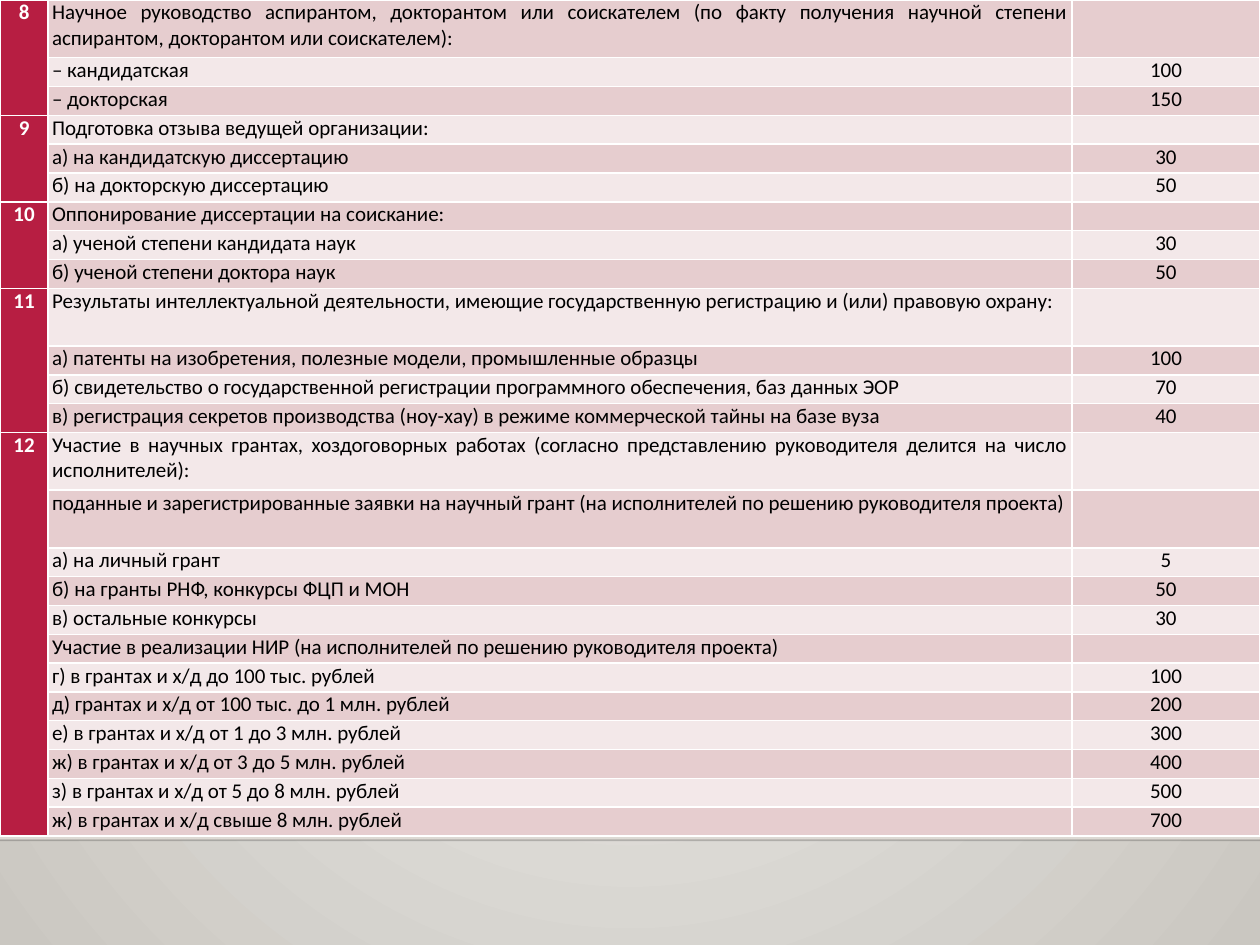
from dataclasses import dataclass
from typing import Optional

from lxml import etree
from pptx import Presentation
from pptx.dml.color import RGBColor
from pptx.enum.shapes import MSO_CONNECTOR, MSO_SHAPE
from pptx.enum.text import PP_ALIGN
from pptx.oxml.ns import qn
from pptx.util import Cm, Pt

CENTER, JUSTIFY = PP_ALIGN.CENTER, PP_ALIGN.JUSTIFY
RECT, STRAIGHT = MSO_SHAPE.RECTANGLE, MSO_CONNECTOR.STRAIGHT
FONT, SIZE = "Calibri", Pt(12)
WHITE, BLACK, RED = "FFFFFF", "000000", "B71E42"
BANDS = ("E6CDCF", "F3E8E9")
WIDTH, HEIGHT = Cm(25.4), Cm(19.05)
TABLE_HEIGHT = Cm(16.87)
COLUMNS = (Cm(0.97), Cm(20.64), Cm(3.79))


@dataclass
class Item:
    text: str
    points: str = ""
    lines: int = 1


@dataclass
class Section:
    number: str
    items: list[Item]


SECTIONS = [
    Section("8", [
        Item("Научное руководство аспирантом, докторантом или соискателем (по факту "
             "получения научной степени аспирантом, докторантом или соискателем):", lines=2),
        Item("– кандидатская ", "100"),
        Item("– докторская", "150"),
    ]),
    Section("9", [
        Item("Подготовка отзыва ведущей организации:"),
        Item("а) на кандидатскую диссертацию", "30"),
        Item("б) на докторскую диссертацию", "50"),
    ]),
    Section("10", [
        Item("Оппонирование диссертации на соискание:"),
        Item("а) ученой степени кандидата наук", "30"),
        Item("б) ученой степени доктора наук", "50"),
    ]),
    Section("11", [
        Item("Результаты интеллектуальной деятельности, имеющие государственную "
             "регистрацию и (или) правовую охрану:", lines=2),
        Item("а) патенты на изобретения, полезные модели, промышленные образцы", "100"),
        Item("б) свидетельство о государственной регистрации программного обеспечения, "
             "баз данных ЭОР", "70"),
        Item("в) регистрация секретов производства (ноу-хау) в режиме коммерческой "
             "тайны на базе вуза", "40"),
    ]),
    Section("12", [
        Item("Участие в научных грантах, хоздоговорных работах (согласно представлению "
             "руководителя делится на число исполнителей):", lines=2),
        Item("поданные и зарегистрированные заявки на научный грант (на исполнителей "
             "по решению руководителя проекта)", lines=2),
        Item("а) на личный грант", "5"),
        Item("б) на гранты РНФ, конкурсы ФЦП и МОН", "50"),
        Item("в) остальные конкурсы ", "30"),
        Item("Участие в реализации НИР (на исполнителей по решению руководителя проекта)"),
        Item("г) в грантах и х/д до 100 тыс. рублей", "100"),
        Item("д) грантах и х/д от 100 тыс. до 1 млн. рублей", "200"),
        Item("е) в грантах и х/д от 1 до 3 млн. рублей", "300"),
        Item("ж) в грантах и х/д от 3 до 5 млн. рублей", "400"),
        Item("з) в грантах и х/д от 5 до 8 млн. рублей", "500"),
        Item("ж) в грантах и х/д свыше 8 млн. рублей", "700"),
    ]),
]


def rgb(value: str) -> RGBColor:
    return RGBColor.from_string(value)


def set_gradient(fill, start: str, end: str) -> None:
    fill.gradient()
    for stop, color, position in zip(fill.gradient_stops, (start, end), (0, 1)):
        stop.color.rgb = rgb(color)
        stop.position = position


def set_alpha(element, percent: int) -> None:
    """Set the opacity of the first colour in the element."""
    color = next(element.iter(qn("a:srgbClr")))
    etree.SubElement(color, qn("a:alpha"), val=str(percent * 1000))


def add_border(cell, color: str, width: int) -> None:
    tcPr = cell._tc.get_or_add_tcPr()
    for i, side in enumerate(("lnL", "lnR", "lnT", "lnB")):
        ln = etree.Element(qn(f"a:{side}"), w=str(width))
        fill = etree.SubElement(ln, qn("a:solidFill"))
        etree.SubElement(fill, qn("a:srgbClr"), val=color)
        tcPr.insert(i, ln)


def fill_cell(cell, text: str, fill: str, align: Optional[PP_ALIGN] = CENTER,
              color: str = BLACK, bold: bool = False) -> None:
    cell.margin_left = cell.margin_right = Cm(0.08)
    cell.margin_top = cell.margin_bottom = 0
    cell.fill.solid()
    cell.fill.fore_color.rgb = rgb(fill)
    add_border(cell, WHITE, Pt(1))
    p = cell.text_frame.paragraphs[0]
    p.alignment = align
    if text:
        r = p.add_run()
        r.text = text
        r.font.name, r.font.size, r.font.bold = FONT, SIZE, bold
        r.font.color.rgb = rgb(color)
    else:
        # Keeps empty cells from growing the row
        etree.SubElement(p._p, qn("a:endParaRPr"), sz=str(int(SIZE.pt * 100)))


def draw_background(s) -> None:
    # Radial page gradient
    set_gradient(s.background.fill, "ECEAE7", "CAC7C1")
    grad = next(s._element.iter(qn("a:gradFill")))
    grad.remove(grad.find(qn("a:lin")))
    circle = etree.SubElement(grad, qn("a:path"), path="circle")
    etree.SubElement(circle, qn("a:fillToRect"), l="50000", t="50000", r="50000", b="50000")

    # Panel that fades in downwards
    panel = s.shapes.add_shape(RECT, 0, Cm(5.59), WIDTH, Cm(11.33))
    panel.shadow.inherit = False
    panel.line.fill.background()
    set_gradient(panel.fill, "DFDBD5", "DFDBD5")
    panel.fill.gradient_angle = 270
    set_alpha(panel._element.spPr, 0)

    # Thin rule at the foot of the panel
    rule = s.shapes.add_connector(STRAIGHT, 0, Cm(16.94), WIDTH, Cm(16.94))
    rule.line.width = Pt(1)
    rule.line.color.rgb = rgb("000001")
    spPr = rule._element.spPr
    set_alpha(spPr, 20)
    etree.SubElement(spPr, qn("a:effectLst"))


def draw_table(s, sections: list[Section]) -> None:
    items = [item for section in sections for item in section.items]
    line_height = TABLE_HEIGHT // sum(item.lines for item in items)
    table = s.shapes.add_table(len(items), len(COLUMNS), 0, 0, WIDTH, TABLE_HEIGHT).table
    table.first_row = table.horz_banding = False
    for column, width in zip(table.columns, COLUMNS):
        column.width = width

    # Item texts and points
    for i, item in enumerate(items):
        table.rows[i].height = line_height * item.lines
        band = BANDS[i % 2]
        fill_cell(table.cell(i, 1), item.text, band, JUSTIFY)
        fill_cell(table.cell(i, 2), item.points, band)

    # Section numbers, merged over their items
    top = 0
    for section in sections:
        count = len(section.items)
        for i in range(count):
            number = "" if i else section.number
            fill_cell(table.cell(top + i, 0), number, RED, color=WHITE, bold=True)
        table.cell(top, 0).merge(table.cell(top + count - 1, 0))
        top += count


def main() -> None:
    prs = Presentation()
    prs.slide_width, prs.slide_height = WIDTH, HEIGHT
    s = prs.slides.add_slide(prs.slide_layouts[6])
    draw_background(s)
    draw_table(s, SECTIONS)
    prs.save("out.pptx")


if __name__ == "__main__":
    main()
